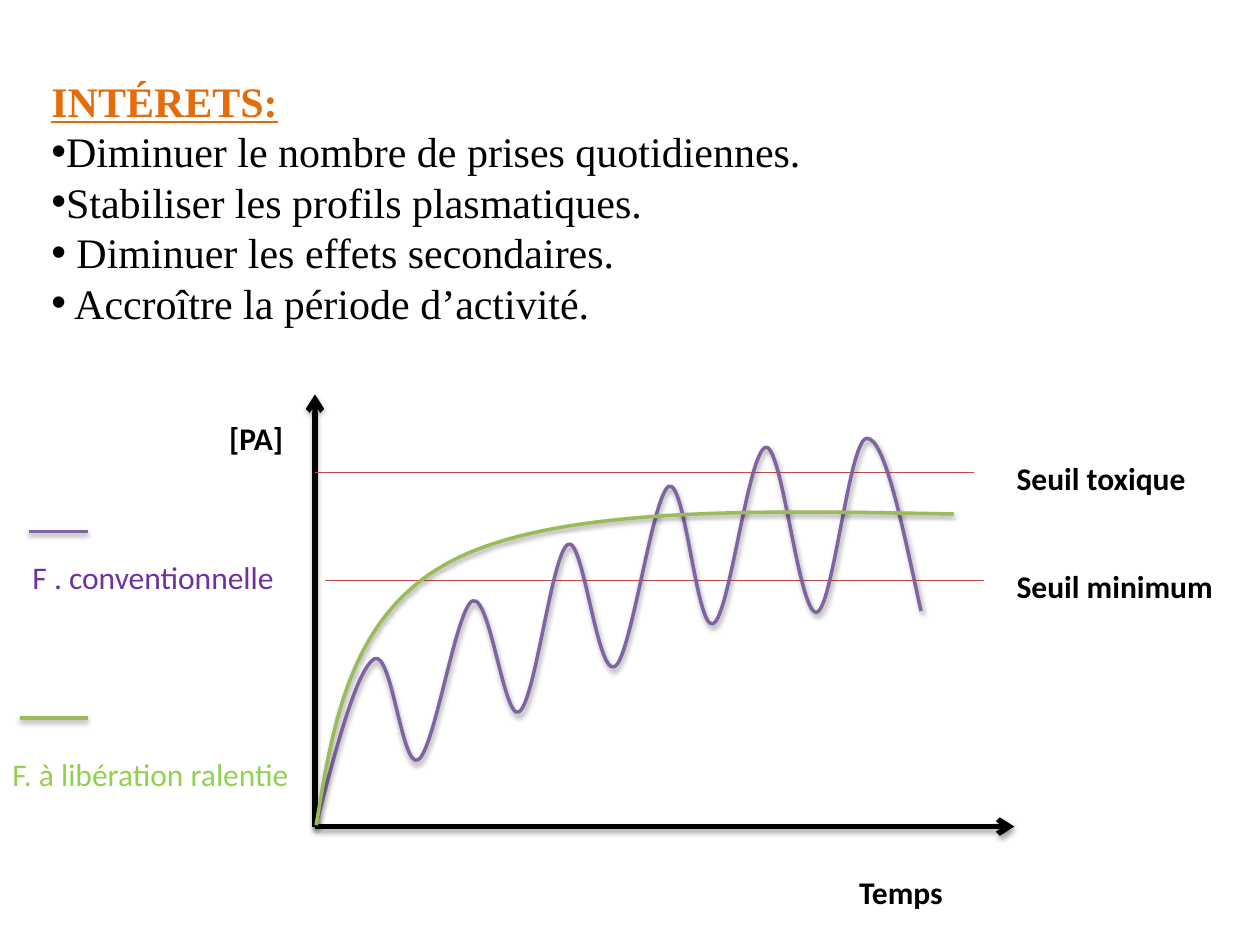
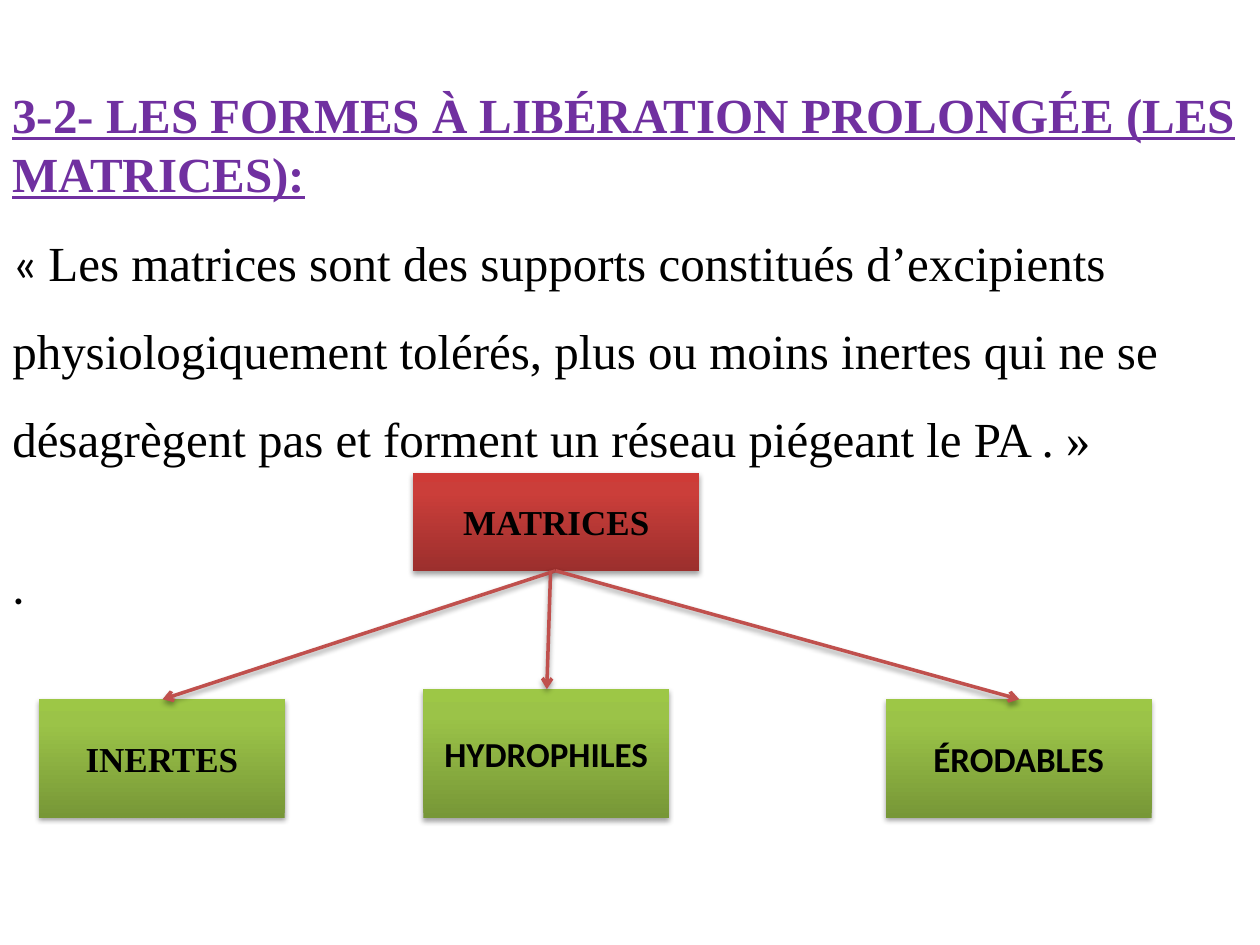
import pptx
import pptx.util
import pptx.dml.color
import pptx.enum.text
import pptx.enum.shapes
import pptx.oxml
import pptx.oxml.ns
import copy
import lxml.etree

Inches, Pt = pptx.util.Inches, pptx.util.Pt
rgb = pptx.dml.color.RGBColor.from_string
qn = pptx.oxml.ns.qn
SERIF, SANS = "Times New Roman", "Calibri"
COLORS = {
    "black": "000000", "orange": "E46C0A", "violet": "7030A0", "lime": "92D050",
    "conventional": "8064A2", "slow_release": "9BBB59", "threshold": "BF4C48", "branch": "C0504D",
}
GRADIENTS = {
    "red": ["9C2F2D", "CB3E3A", "CE3B37"],
    "green": ["779737", "9BC348", "9DC746"],
}
shadowed = []


def write(paragraph, text, size, font=SERIF, color="black", bold=False, underline=False):
    run = paragraph.add_run()
    run.text = text
    run.font.size = Pt(size)
    run.font.name = font
    run.font.bold = bold
    run.font.underline = underline
    run.font.color.rgb = rgb(COLORS[color])


def draw_line(slide, start, end, color, width, arrow=False, shadow=True):
    line = slide.shapes.add_connector(
        pptx.enum.shapes.MSO_CONNECTOR.STRAIGHT, *[Inches(v) for v in (*start, *end)])
    line.line.color.rgb = rgb(COLORS[color])
    line.line.width = Pt(width)
    properties = line._element.spPr
    if arrow:
        lxml.etree.SubElement(properties.find(qn("a:ln")), qn("a:tailEnd"), type="arrow")
    effects = lxml.etree.SubElement(properties, qn("a:effectLst"))
    if shadow:
        shadowed.append(effects)


prs = pptx.Presentation()
prs.slide_width, prs.slide_height = Inches(10), Inches(7.5)
blank = prs.slide_layouts[6]

benefits_slide = prs.slides.add_slide(blank)
benefits = benefits_slide.shapes.add_textbox(
    Inches(0.31), Inches(0.55), Inches(9.3), Inches(2.93)).text_frame
benefits.word_wrap = True
write(benefits.paragraphs[0], "INTÉRETS:", 24, color="orange", bold=True, underline=True)
for benefit in [
    "Diminuer le nombre de prises quotidiennes.",
    "Stabiliser les profils plasmatiques.",
    " Diminuer les effets secondaires.",
    " Accroître la période d’activité.",
]:
    item = benefits.add_paragraph()
    bullet = item._p.get_or_add_pPr()
    lxml.etree.SubElement(bullet, qn("a:buFont"), typeface="Arial")
    lxml.etree.SubElement(bullet, qn("a:buChar"), char="•")
    write(item, benefit, 24)

origin = (2.5, 6.56)
for axis_end in [(2.5, 3.13), (8.05, 6.56)]:
    draw_line(benefits_slide, origin, axis_end, "black", 3, arrow=True)
for left, level in [(2.5, 3.75), (2.58, 4.61)]:
    draw_line(benefits_slide, (left, level), (left + 5.23, level), "threshold", 0.75, shadow=False)
for left, level, color in [(0.23, 4.22, "conventional"), (0.16, 5.7, "slow_release")]:
    draw_line(benefits_slide, (left, level), (0.7, level), color, 2)

for text, left, top, width, color, bold in [
    ("[PA]", 1.72, 3.28, 0.7, "black", True),
    ("Temps", 6.72, 6.88, 1.33, "black", True),
    ("F . conventionnelle", 0.16, 4.38, 2.27, "violet", False),
    ("F. à libération ralentie", 0, 5.94, 2.5, "lime", False),
    ("Seuil toxique", 7.97, 3.59, 1.72, "black", True),
    ("Seuil minimum", 7.97, 4.45, 2.03, "black", True),
]:
    label = benefits_slide.shapes.add_textbox(
        Inches(left), Inches(top), Inches(width), Inches(0.4)).text_frame
    label.word_wrap = True
    write(label.paragraphs[0], text, 18, SANS, color, bold)

conventional_curve = [
    (2.51, 6.54),
    (2.67, 5.93), (2.83, 5.32), (2.97, 5.23),
    (3.11, 5.15), (3.19, 6.11), (3.32, 6.03),
    (3.45, 5.95), (3.62, 4.83), (3.75, 4.77),
    (3.89, 4.71), (4, 5.72), (4.12, 5.65),
    (4.25, 5.57), (4.38, 4.38), (4.51, 4.32),
    (4.63, 4.26), (4.74, 5.37), (4.88, 5.29),
    (5.01, 5.22), (5.18, 3.92), (5.31, 3.86),
    (5.44, 3.81), (5.53, 5.01), (5.66, 4.95),
    (5.79, 4.9), (5.94, 3.57), (6.08, 3.55),
    (6.21, 3.54), (6.34, 4.87), (6.48, 4.86),
    (6.61, 4.85), (6.74, 3.48), (6.88, 3.48),
    (7.02, 3.47), (7.16, 4.16), (7.31, 4.85),
]
slow_release_curve = [
    (2.51, 6.55),
    (2.65, 5.7), (2.79, 4.84), (3.63, 4.43),
    (4.47, 4.02), (6.02, 4.05), (7.57, 4.08),
]
for color, knots in [("conventional", conventional_curve), ("slow_release", slow_release_curve)]:
    (start_x, start_y), *controls = [(Inches(x), Inches(y)) for x, y in knots]
    outline = benefits_slide.shapes.build_freeform(start_x, start_y)
    outline.add_line_segments(controls, close=False)
    curve = outline.convert_to_shape()
    segments = list(curve._element.spPr.iter(qn("a:lnTo")))
    for first in range(0, len(segments), 3):
        bezier = lxml.etree.SubElement(segments[first].getparent(), qn("a:cubicBezTo"))
        for segment in segments[first:first + 3]:
            bezier.append(segment[0])
            segment.getparent().remove(segment)
    curve.fill.background()
    curve.line.color.rgb = rgb(COLORS[color])
    curve.line.width = Pt(2)
    curve.shadow.inherit = False
    shadowed.append(curve._element.spPr.find(qn("a:effectLst")))

matrices_slide = prs.slides.add_slide(blank)
definition = matrices_slide.shapes.add_textbox(
    Inches(0), Inches(0.62), Inches(10), Inches(4.34)).text_frame
definition.word_wrap = True
write(definition.paragraphs[0], "3-2- LES FORMES À LIBÉRATION PROLONGÉE (LES MATRICES):",
      28, color="violet", bold=True, underline=True)
quote = definition.add_paragraph()
quote.line_spacing = 1.5
quote.space_before = Pt(0.5)
write(quote, "« ", 28, SANS)
write(quote, "Les matrices sont des supports constitués d’excipients physiologiquement tolérés, "
      "plus ou moins inertes qui ne se désagrègent pas et forment un réseau piégeant le PA . »", 28)
closing = definition.add_paragraph()
closing.space_before = Pt(50.5)
write(closing, ".", 28, SANS)

for text, left, top, width, height, gradient, font in [
    ("MATRICES", 3.28, 3.75, 2.27, 0.78, "red", SERIF),
    ("INERTES", 0.31, 5.55, 1.95, 0.94, "green", SERIF),
    ("HYDROPHILES", 3.36, 5.47, 1.95, 1.02, "green", SANS),
    ("ÉRODABLES", 7.03, 5.55, 2.11, 0.94, "green", SANS),
]:
    box = matrices_slide.shapes.add_shape(
        pptx.enum.shapes.MSO_SHAPE.RECTANGLE,
        Inches(left), Inches(top), Inches(width), Inches(height))
    box.fill.gradient()
    box.fill.gradient_angle = 90
    stop_list = box._element.spPr.find(".//" + qn("a:gsLst"))
    stop_list.insert(1, copy.deepcopy(stop_list[0]))
    for stop, position, shade in zip(box.fill.gradient_stops, (0, 0.8, 1), GRADIENTS[gradient]):
        stop.position = position
        stop.color.rgb = rgb(shade)
    box.line.fill.background()
    box.shadow.inherit = False
    shadowed.append(box._element.spPr.find(qn("a:effectLst")))
    box.text_frame.word_wrap = True
    box.text_frame.vertical_anchor = pptx.enum.text.MSO_ANCHOR.MIDDLE
    name = box.text_frame.paragraphs[0]
    name.alignment = pptx.enum.text.PP_ALIGN.CENTER
    write(name, text, 20, font, bold=True)

for start, end in [
    ((4.41, 4.53), (1.29, 5.55)),
    ((4.37, 4.53), (4.34, 5.47)),
    ((4.41, 4.53), (8.09, 5.55)),
]:
    draw_line(matrices_slide, start, end, "branch", 2, arrow=True)

for effects in shadowed:
    outer = lxml.etree.SubElement(
        effects, qn("a:outerShdw"), blurRad=str(Pt(3.1)), dist=str(Pt(1.7)),
        dir="5400000", rotWithShape="0")
    tint = lxml.etree.SubElement(outer, qn("a:srgbClr"), val=COLORS["black"])
    lxml.etree.SubElement(tint, qn("a:alpha"), val="36000")

prs.save("out.pptx")
